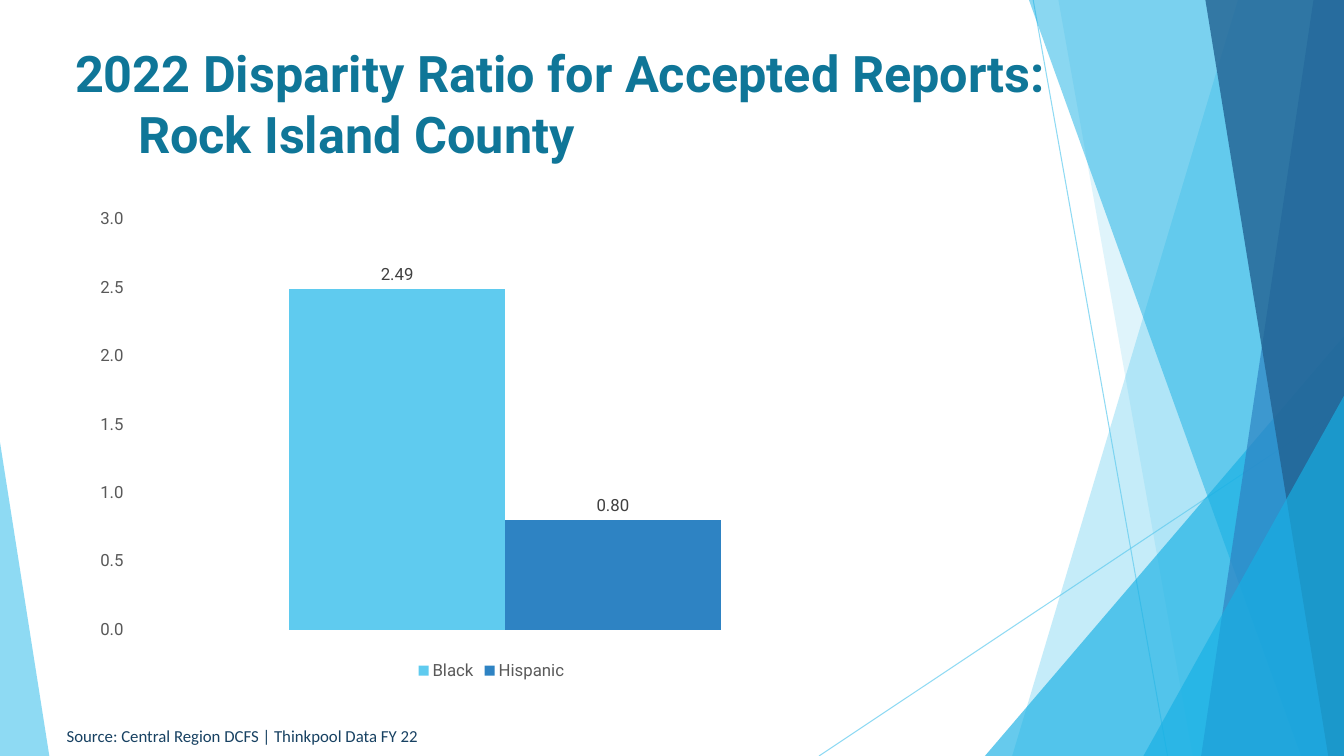
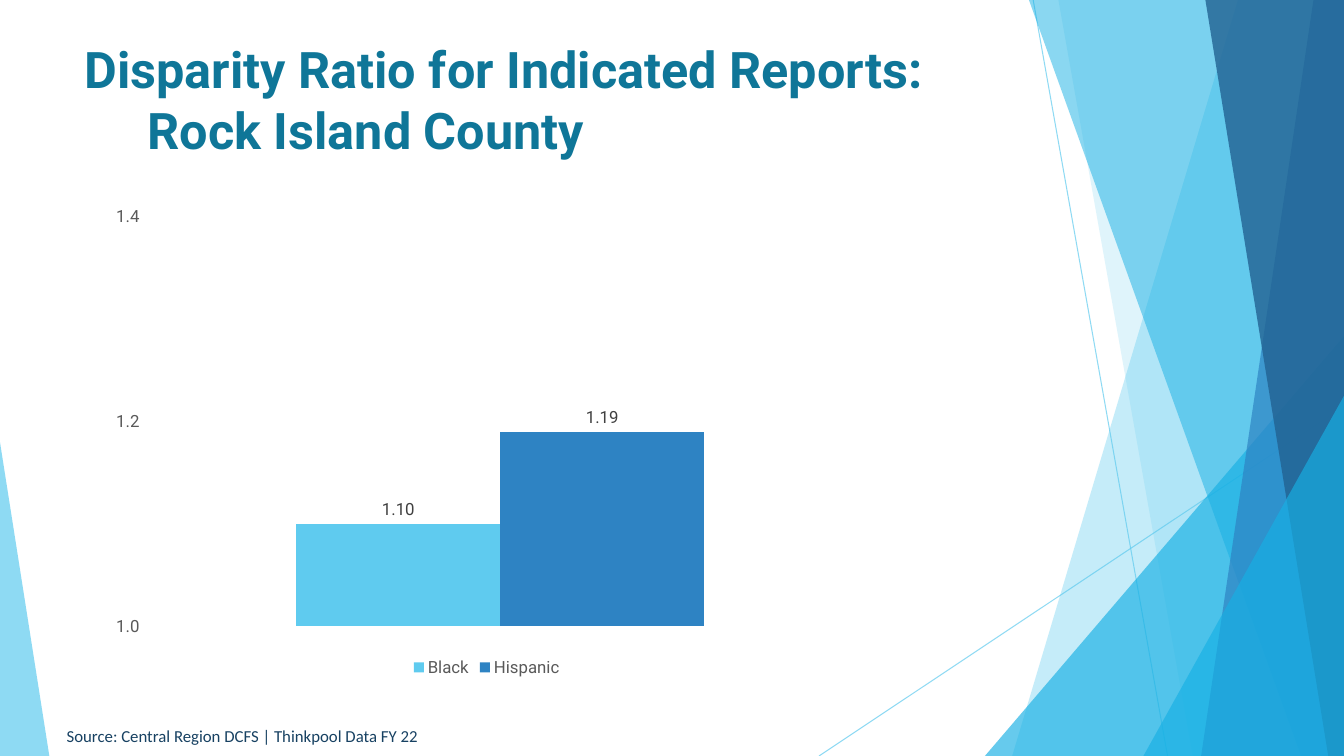
from dataclasses import dataclass

from lxml.etree import SubElement
from pptx import Presentation
from pptx.chart.data import CategoryChartData
from pptx.dml.color import RGBColor
from pptx.enum.chart import XL_CHART_TYPE as CT, XL_LABEL_POSITION as LP
from pptx.enum.chart import XL_LEGEND_POSITION as LEGEND, XL_TICK_MARK as TICK
from pptx.enum.shapes import MSO_CONNECTOR as CONN, MSO_SHAPE as SHAPE
from pptx.enum.text import MSO_ANCHOR as ANCHOR, MSO_AUTO_SIZE as AUTO
from pptx.oxml.ns import qn
from pptx.util import Pt

PX = 9525  # EMU per px, 96 px to the inch
WIDTH, HEIGHT = 1280, 720


@dataclass(frozen=True)
class Theme:
    sky: str = "5FCBEF"
    cyan: str = "17B0E4"
    blue: str = "2E83C3"
    navy: str = "226292"
    title: str = "0F7698"
    source: str = "174162"
    axis: str = "595959"
    label: str = "404040"
    heading_font: str = "Roboto"
    source_font: str = "Calibri"
    title_size: int = 36
    small_size: int = 12


class Deck:
    """Holds the style and the slide being drawn."""

    def __init__(self, theme):
        self.t = theme
        self.prs = Presentation()
        self.prs.slide_width, self.prs.slide_height = WIDTH * PX, HEIGHT * PX
        self.s = None

    def new_slide(self):
        self.s = self.prs.slides.add_slide(self.prs.slide_layouts[6])
        self.backdrop()

    # Style helpers
    def style(self, font, size, color, name, bold=False):
        font.size, font.bold, font.name = Pt(size), bold, name
        font.color.rgb = RGBColor.from_string(color)

    def small(self, font, color):
        self.style(font, self.t.small_size, color, self.t.heading_font)

    def opacity(self, sp, percent):
        for color in sp._element.spPr.iter(qn("a:srgbClr")):
            SubElement(color, qn("a:alpha")).set("val", str(percent * 1000))

    def paint(self, sp, color, percent):
        sp.shadow.inherit = False
        sp.line.fill.background()
        sp.fill.solid()
        sp.fill.fore_color.rgb = RGBColor.from_string(color)
        self.opacity(sp, percent)

    # Backdrop pieces
    def line(self, x1, y1, x2, y2):
        ln = self.s.shapes.add_connector(
            CONN.STRAIGHT, x1 * PX, y1 * PX, x2 * PX, y2 * PX)
        ln.line.width = Pt(0.75)
        ln.line.color.rgb = RGBColor.from_string(self.t.sky)
        self.opacity(ln, 70)
        SubElement(ln._element.spPr, qn("a:effectLst"))

    def ribbon(self, top_x, bottom_x, color, percent):
        """Full-height band from a slanted left edge to the slide's right edge."""
        fb = self.s.shapes.build_freeform(top_x, 0, scale=PX)
        fb.add_line_segments([(WIDTH, 0), (WIDTH, HEIGHT), (bottom_x, HEIGHT)])
        self.paint(fb.convert_to_shape(), color, percent)

    def corner(self, x, y, w, apex, color, percent):
        """Right-angled triangle standing on the slide's bottom edge."""
        sp = self.s.shapes.add_shape(SHAPE.ISOSCELES_TRIANGLE, x * PX, y * PX,
                                     w * PX, (HEIGHT - y) * PX)
        sp.adjustments[0] = apex
        self.paint(sp, color, percent)

    def backdrop(self):
        t = self.t
        self.line(984, 0, 1112, HEIGHT)
        self.line(WIDTH, 387, 780, HEIGHT)
        self.ribbon(1179, 964, t.sky, 36)
        self.ribbon(1008, 1136, t.sky, 20)
        self.corner(938, 320, 342, 1, t.cyan, 66)
        self.ribbon(980, 1239, t.cyan, 50)
        self.ribbon(1251, 1144, t.blue, 70)
        self.ribbon(1148, 1265, t.navy, 80)
        self.corner(1089, 377, 191, 1, t.cyan, 66)
        self.corner(0, 421, 47, 0, t.sky, 70)

    # Text
    def text(self, box, text):
        tf = self.s.shapes.add_textbox(*(v * PX for v in box)).text_frame
        p = tf.paragraphs[0]
        p.text = text
        return tf, p

    def title(self, box, first, second):
        tf, p = self.text(box, f"{first}\v{second}")
        tf.word_wrap = True
        tf.vertical_anchor = ANCHOR.MIDDLE
        self.style(p.font, self.t.title_size, self.t.title,
                   self.t.heading_font, bold=True)
        # Hanging indent sets the second line in
        indent = 60 * PX
        pPr = p._p.get_or_add_pPr()
        pPr.set("marL", str(indent))
        pPr.set("indent", str(-indent))

    def source(self, text):
        tf, p = self.text((54, 686, 361, 29), text)
        tf.word_wrap = False
        tf.auto_size = AUTO.SHAPE_TO_FIT_TEXT
        self.style(p.font, self.t.small_size, self.t.source, self.t.source_font)

    # Chart
    def columns(self, box, values, low, high, step):
        data = CategoryChartData()
        data.categories = ["1"]
        for name, value in values.items():
            data.add_series(name, [value])
        chart = self.s.shapes.add_chart(
            CT.COLUMN_CLUSTERED, *(v * PX for v in box), data).chart
        chart.has_title = False
        self.small(chart.font, self.t.axis)

        chart.has_legend = True
        chart.legend.position = LEGEND.BOTTOM
        chart.legend.include_in_layout = False
        self.small(chart.legend.font, self.t.axis)

        chart.category_axis.visible = False
        axis = chart.value_axis
        axis.minimum_scale, axis.maximum_scale, axis.major_unit = low, high, step
        axis.has_major_gridlines = False
        axis.major_tick_mark = axis.minor_tick_mark = TICK.NONE
        axis.format.line.fill.background()
        axis.tick_labels.number_format = "0.0"
        axis.tick_labels.number_format_is_linked = False
        self.small(axis.tick_labels.font, self.t.axis)

        plot = chart.plots[0]
        plot.gap_width, plot.overlap, plot.vary_by_categories = 150, 0, False
        for series, color in zip(plot.series, (self.t.sky, self.t.blue)):
            series.format.fill.solid()
            series.format.fill.fore_color.rgb = RGBColor.from_string(color)
            labels = series.data_labels
            labels.show_value = True
            labels.position = LP.OUTSIDE_END
            labels.number_format = "#,##0.00"
            labels.number_format_is_linked = False
            self.small(labels.font, self.t.label)


COUNTY = "Rock Island County"
SOURCE = "Source: Central Region DCFS | Thinkpool Data FY 22"


def main():
    deck = Deck(Theme())

    # Accepted reports
    deck.new_slide()
    deck.title((62, 29, 988, 138),
               "2022 Disparity Ratio for Accepted Reports:", COUNTY)
    deck.source(SOURCE)
    deck.columns((80, 190, 776, 462), {"Black": 2.49, "Hispanic": 0.80},
                 0, 3, 0.5)

    # Indicated reports
    deck.new_slide()
    deck.title((71, 35, 902, 118),
               "Disparity Ratio for Indicated Reports:", COUNTY)
    deck.source(SOURCE)
    deck.columns((96, 188, 735, 461), {"Black": 1.10, "Hispanic": 1.19},
                 1, 1.4, 0.2)

    deck.prs.save("out.pptx")


if __name__ == "__main__":
    main()
